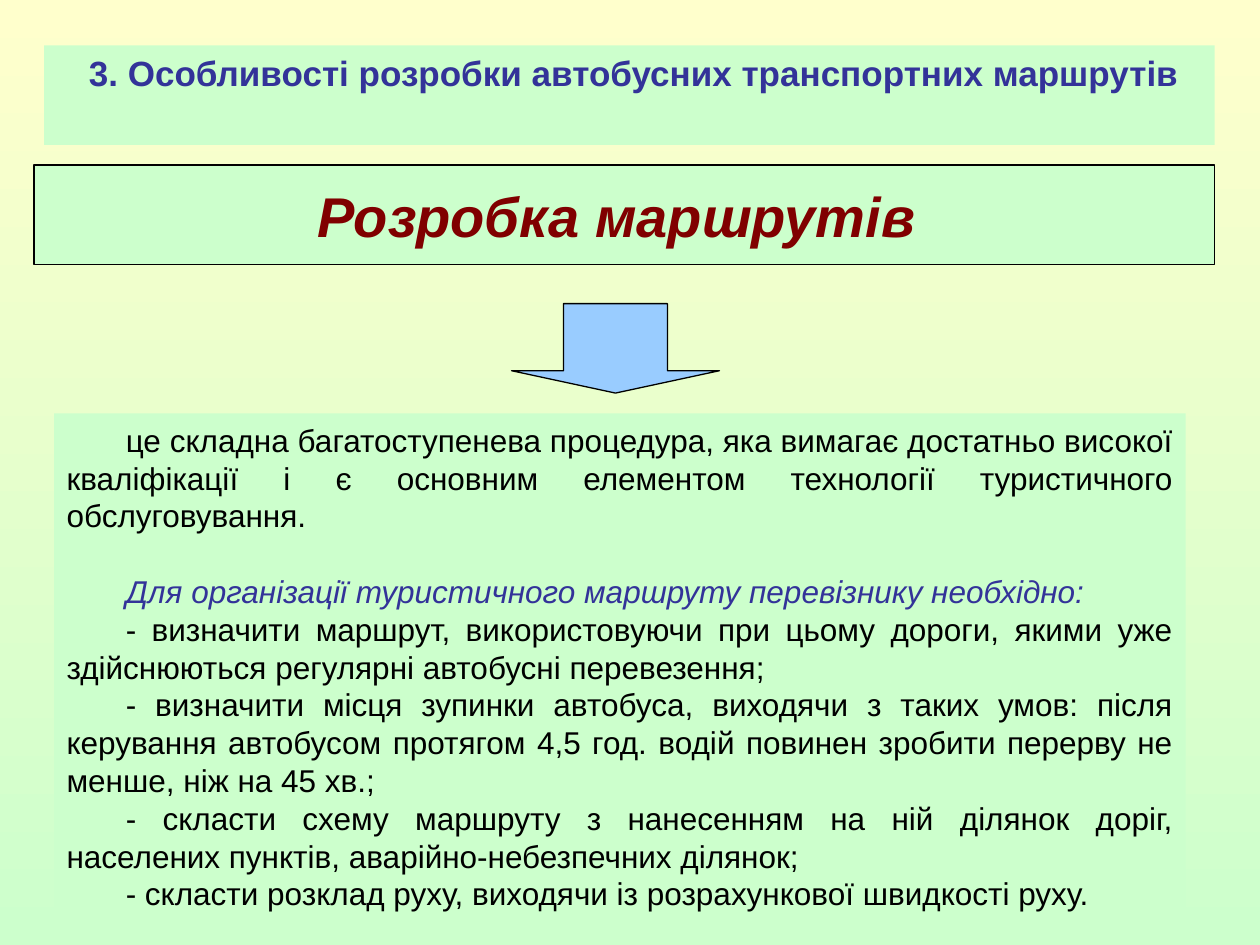
"""Build the slide on developing bus transport routes."""
import pptx
import pptx.util
from pptx.dml.color import RGBColor
from pptx.enum.shapes import MSO_SHAPE
from pptx.enum.text import MSO_ANCHOR, PP_ALIGN
from pptx.util import Inches, Pt

GREEN, YELLOW, BLUE = "CCFFCC", "FFFFCC", "99CCFF"
BLACK, INDIGO, MAROON = "000000", "333399", "800000"

TITLE = "3. Особливості розробки автобусних транспортних маршрутів"
TERM = "Розробка маршрутів "
DEFINITION = ("це складна багатоступенева процедура, яка вимагає достатньо високої "
              "кваліфікації і є основним елементом технології туристичного обслуговування. ")
LEAD = "Для організації туристичного маршруту перевізнику необхідно: "
STEPS = [
    "- визначити маршрут, використовуючи при цьому дороги, якими уже "
    "здійснюються регулярні автобусні перевезення; ",
    "- визначити місця зупинки автобуса, виходячи з таких умов: після керування "
    "автобусом протягом 4,5 год. водій повинен зробити перерву не менше, ніж на 45 хв.; ",
    "- скласти схему маршруту з нанесенням на ній ділянок доріг, населених "
    "пунктів, аварійно-небезпечних ділянок; ",
    "- скласти розклад руху, виходячи із розрахункової швидкості руху. ",
]


def rgb(color):
    return RGBColor.from_string(color)


def add_block(s, kind, box, fill, line=None, anchor=MSO_ANCHOR.MIDDLE):
    sp = s.shapes.add_shape(kind, *(Inches(v) for v in box))
    sp.shadow.inherit = False
    sp.fill.solid()
    sp.fill.fore_color.rgb = rgb(fill)
    if line:
        sp.line.color.rgb = rgb(line)
        sp.line.width = Pt(0.75)
    else:
        sp.line.fill.background()
    sp.text_frame.word_wrap = True
    sp.text_frame.vertical_anchor = anchor
    return sp


def write(p, text, size, color, align, bold=False, italic=False, before=0, margin=0, indent=0):
    p.text = text
    p.alignment = align
    p.space_before = Pt(before)
    pPr = p._p.get_or_add_pPr()
    pPr.set("marL", str(Inches(margin)))
    pPr.set("indent", str(Inches(indent)))
    for r in p.runs:
        r.font.name = "Arial"
        r.font.size = Pt(size)
        r.font.bold = bold
        r.font.italic = italic
        r.font.color.rgb = rgb(color)


def main():
    prs = pptx.Presentation()
    prs.slide_width, prs.slide_height = Inches(10), Inches(7.5)
    s = prs.slides.add_slide(prs.slide_layouts[6])
    bg = s.background.fill
    bg.gradient()
    bg.gradient_angle = 270
    for stop, color, position in zip(bg.gradient_stops, (YELLOW, GREEN), (0, 1)):
        stop.color.rgb = rgb(color)
        stop.position = position

    tf = add_block(s, MSO_SHAPE.RECTANGLE, (0.43, 3.28, 8.98, 4.02), GREEN).text_frame
    body = [(DEFINITION, {}), (LEAD, {"color": INDIGO, "italic": True, "before": 21.6})]
    body += [(step, {}) for step in STEPS]
    for i, (text, style) in enumerate(body):
        p = tf.add_paragraph() if i else tf.paragraphs[0]
        write(p, text, 18, **{"color": BLACK, "align": PP_ALIGN.JUSTIFY, "indent": 0.47, **style})

    sp = add_block(s, MSO_SHAPE.RECTANGLE, (0.35, 0.36, 9.29, 0.79), GREEN, anchor=MSO_ANCHOR.TOP)
    write(sp.text_frame.paragraphs[0], TITLE, 20, INDIGO, PP_ALIGN.CENTER,
          bold=True, before=4, margin=0.45, indent=-0.38)

    sp = add_block(s, MSO_SHAPE.RECTANGLE, (0.27, 1.31, 9.37, 0.79), GREEN, BLACK)
    write(sp.text_frame.paragraphs[0], TERM, 32, MAROON, PP_ALIGN.CENTER, bold=True, italic=True)

    sp = add_block(s, MSO_SHAPE.DOWN_ARROW, (4.06, 2.41, 1.65, 0.71), BLUE, BLACK)
    sp.adjustments[0], sp.adjustments[1] = 0.5, 0.25

    prs.save("out.pptx")


if __name__ == "__main__":
    main()
